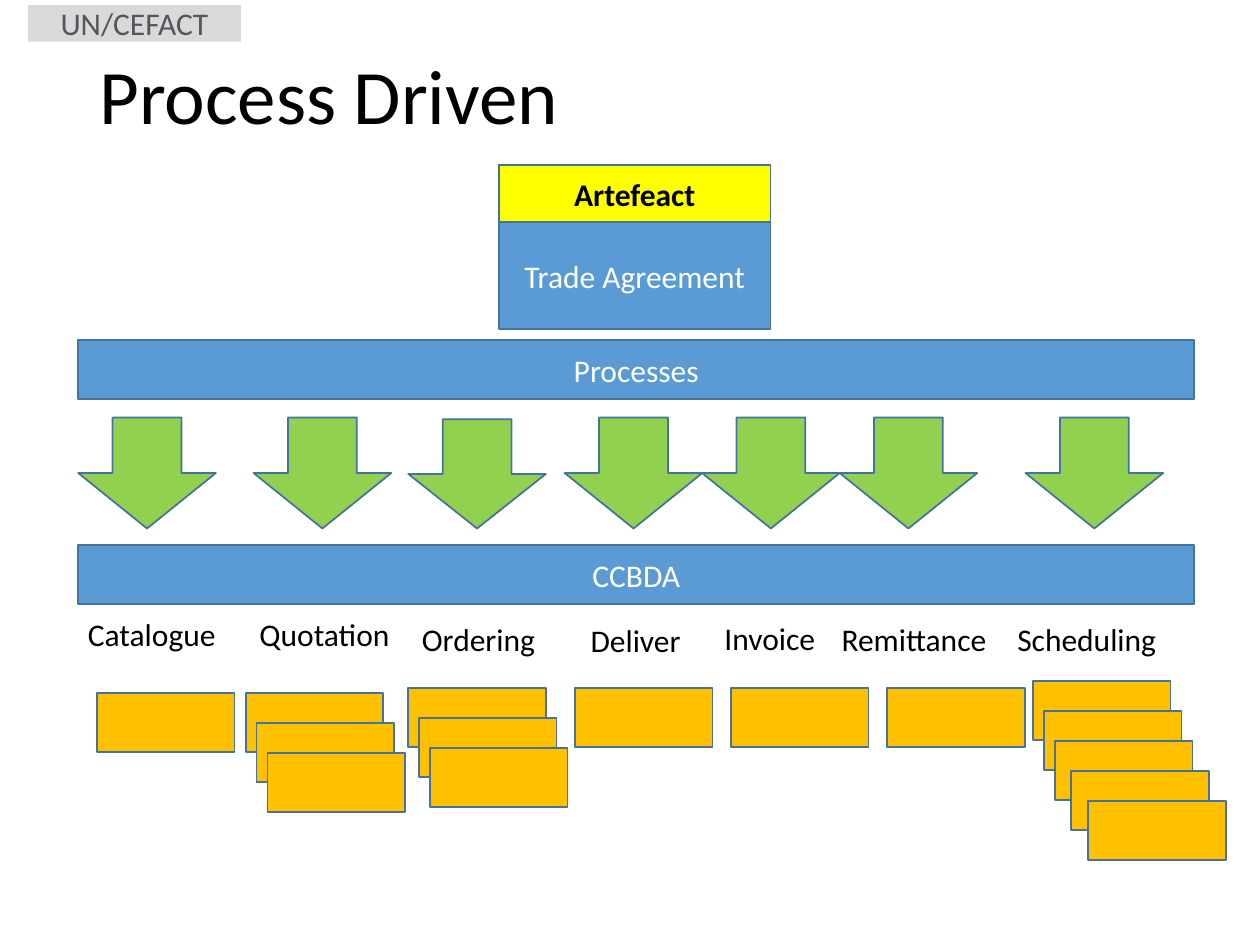
import pptx
import pptx.util
import pptx.dml.color
import pptx.enum.shapes
import pptx.enum.text

Pt = pptx.util.Pt
SHAPES = pptx.enum.shapes.MSO_SHAPE
ANCHOR = pptx.enum.text.MSO_ANCHOR
ALIGN = pptx.enum.text.PP_ALIGN

THEME = {
    "font": "Calibri", "title_size": 44, "body_size": 18, "line_width": 1,
    "outline": "43739E", "bar": "5B9BD5", "arrow": "92D050",
    "document": "FFC000", "artefact": "FFFF00", "tag": "D9D9D9",
    "tag_text": "53575C", "light": "FFFFFF", "dark": "000000",
}

TAG = ("UN/CEFACT", (16, 2.9, 121.7, 20.9))
TITLE = ("Process Driven", (49.7, 28.8, 620.6, 56.2))
AGREEMENT = ("Trade Agreement", (285.1, 127.2, 155.2, 60.8))
ARTEFACT = ("Artefeact", (285.1, 94.4, 155.2, 32.7))
BARS = [("Processes", 194.4), ("CCBDA", 311.6)]
BAR_LEFT, BAR_WIDTH, BAR_HEIGHT = 44.7, 637.8, 33.8

ARROW_TOP, ARROW_BOTTOM = 238.6, 302
LABEL_HEIGHT = 29.1
DOCUMENT_WIDTH, DOCUMENT_HEIGHT = 78.7, 33.8
STEP_DOWN = 17.15
SINGLE = [0]
TRIPLE = [0, 6.2, 12.5]
QUINTUPLE = [0, 6.2, 12.5, 21.9, 31.5]

PROCESSES = [
    {"name": "Catalogue", "arrow": (44.7, 0), "label": (43.2, 347.8, 88.6),
     "documents": (55.4, 396), "shifts": SINGLE},
    {"name": "Quotation", "arrow": (144.9, 0), "label": (141.2, 347.8, 90),
     "documents": (140.4, 396), "shifts": TRIPLE},
    {"name": "Ordering", "arrow": (233.3, 1), "label": (234, 350.7, 79.9),
     "documents": (233.2, 393.2), "shifts": TRIPLE},
    {"name": "Deliver", "arrow": (322.7, 0), "label": (330.4, 351.4, 67),
     "documents": (328.5, 393.2), "shifts": SINGLE},
    {"name": "Invoice", "arrow": (401.2, 0), "label": (406.9, 350, 67),
     "documents": (417.7, 393.2), "shifts": SINGLE},
    {"name": "Remittance", "arrow": (479.8, 0), "label": (473.8, 350.6, 98.6),
     "documents": (506.9, 393.2), "shifts": SINGLE},
    {"name": "Scheduling", "arrow": (586, 0), "label": (574.2, 350.6, 95),
     "documents": (590.3, 389.1), "shifts": QUINTUPLE},
]


def color(role):
    return pptx.dml.color.RGBColor.from_string(THEME[role])


def write(frame, text, size, role, bold=False):
    paragraph = frame.paragraphs[0]
    run = paragraph.add_run()
    run.text = text
    run.font.name = THEME["font"]
    run.font.size = Pt(THEME[size])
    run.font.bold = bold
    run.font.color.rgb = color(role)
    return paragraph


def add_block(slide, kind, area, fill, text="", role="light", bold=False, outlined=True):
    block = slide.shapes.add_shape(kind, *map(Pt, area))
    block.shadow.inherit = False
    block.fill.solid()
    block.fill.fore_color.rgb = color(fill)
    if outlined:
        block.line.color.rgb = color("outline")
        block.line.width = Pt(THEME["line_width"])
    else:
        block.line.fill.background()
    if text:
        block.text_frame.vertical_anchor = ANCHOR.MIDDLE
        write(block.text_frame, text, "body_size", role, bold).alignment = ALIGN.CENTER


def add_text(slide, area, text, size, anchor, wrap):
    frame = slide.shapes.add_textbox(*map(Pt, area)).text_frame
    frame.word_wrap = wrap
    frame.vertical_anchor = anchor
    return write(frame, text, size, "dark")


def add_process(slide, process):
    left, drop = process["arrow"]
    top = ARROW_TOP + drop
    add_block(slide, SHAPES.DOWN_ARROW,
              (left, top, DOCUMENT_WIDTH, ARROW_BOTTOM - top), "arrow")
    label_left, label_top, label_width = process["label"]
    add_text(slide, (label_left, label_top, label_width, LABEL_HEIGHT),
             process["name"], "body_size", ANCHOR.TOP, False)
    left, top = process["documents"]
    for level, shift in enumerate(process["shifts"]):
        add_block(slide, SHAPES.RECTANGLE,
                  (left + shift, top + level * STEP_DOWN, DOCUMENT_WIDTH, DOCUMENT_HEIGHT),
                  "document")


def main():
    deck = pptx.Presentation()
    deck.slide_width, deck.slide_height = Pt(720), Pt(540)
    slide = deck.slides.add_slide(deck.slide_layouts[6])

    name, area = TAG
    add_block(slide, SHAPES.RECTANGLE, area, "tag", name, "tag_text", outlined=False)
    name, area = TITLE
    add_text(slide, area, name, "title_size", ANCHOR.MIDDLE, True).line_spacing = 0.9
    name, area = AGREEMENT
    add_block(slide, SHAPES.RECTANGLE, area, "bar", name)
    name, area = ARTEFACT
    add_block(slide, SHAPES.RECTANGLE, area, "artefact", name, "dark", bold=True)
    for name, top in BARS:
        add_block(slide, SHAPES.RECTANGLE, (BAR_LEFT, top, BAR_WIDTH, BAR_HEIGHT), "bar", name)
    for process in PROCESSES:
        add_process(slide, process)

    deck.save("out.pptx")


if __name__ == "__main__":
    main()
